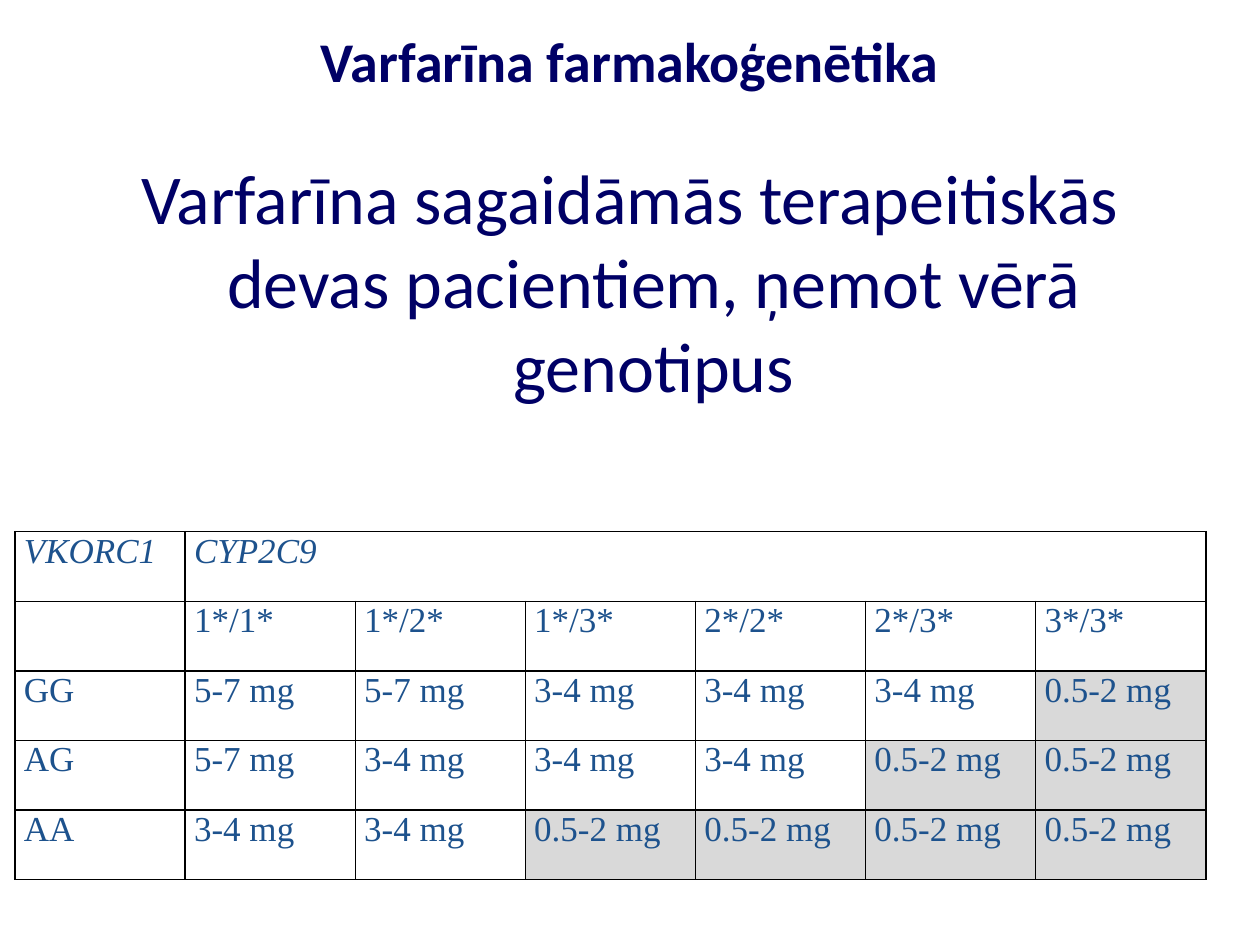
import pptx
import pptx.dml.color
import pptx.enum.text
import pptx.oxml
import pptx.oxml.ns
import pptx.util

NAVY = pptx.dml.color.RGBColor(0x00, 0x00, 0x66)
BLUE = pptx.dml.color.RGBColor(0x1D, 0x52, 0x8D)
BLACK = pptx.dml.color.RGBColor(0x00, 0x00, 0x00)
GREY = pptx.dml.color.RGBColor(0xD9, 0xD9, 0xD9)
WIDTH = pptx.util.Inches(10)
HEIGHT = pptx.util.Inches(7.5)
GRID_COLUMNS = 100
GRID_ROWS = 75
ALIGN = pptx.enum.text.PP_ALIGN

LOW_DOSE = "0.5-2 mg"
MEDIUM_DOSE = "3-4 mg"
HIGH_DOSE = "5-7 mg"
CYP2C9_GENOTYPES = ["1*/1*", "1*/2*", "1*/3*", "2*/2*", "2*/3*", "3*/3*"]
DOSES = {
    "GG": [HIGH_DOSE] * 2 + [MEDIUM_DOSE] * 3 + [LOW_DOSE],
    "AG": [HIGH_DOSE] + [MEDIUM_DOSE] * 3 + [LOW_DOSE] * 2,
    "AA": [MEDIUM_DOSE] * 2 + [LOW_DOSE] * 4,
}


class SlideBuilder:
    heading_font = "Calibri"
    table_font = "Times New Roman"

    def __init__(self, deck):
        self.slide = deck.slides.add_slide(deck.slide_layouts[5])

    def area(self, column, row, columns, rows):
        across, down = WIDTH / GRID_COLUMNS, HEIGHT / GRID_ROWS
        return (round(column * across), round(row * down),
                round(columns * across), round(rows * down))

    def style(self, para, name, size, color, align, bold=False, italic=False):
        para.alignment = align
        para.font.name = name
        para.font.size = pptx.util.Pt(size)
        para.font.color.rgb = color
        para.font.bold = bold
        para.font.italic = italic

    def title(self, text, *place):
        box = self.slide.shapes.title
        box.left, box.top, box.width, box.height = self.area(*place)
        box.text_frame.text = text
        box.text_frame.vertical_anchor = pptx.enum.text.MSO_ANCHOR.MIDDLE
        self.style(box.text_frame.paragraphs[0], self.heading_font, 32, NAVY,
                   ALIGN.CENTER, bold=True)

    def statement(self, text, hanging, *place):
        box = self.slide.shapes.add_textbox(*self.area(*place))
        box.text_frame.word_wrap = True
        box.text_frame.text = text
        para = box.text_frame.paragraphs[0]
        properties = para._p.get_or_add_pPr()
        properties.set("marL", str(pptx.util.Inches(hanging)))
        properties.set("indent", str(-pptx.util.Inches(hanging)))
        self.style(para, self.heading_font, 40, NAVY, ALIGN.CENTER)

    def border(self, cell):
        properties = cell._tc.get_or_add_tcPr()
        for position, side in enumerate(("lnL", "lnR", "lnT", "lnB")):
            properties.insert(position, pptx.oxml.parse_xml(
                f'<a:{side} {pptx.oxml.ns.nsdecls("a")} w="{pptx.util.Pt(1)}">'
                f'<a:solidFill><a:srgbClr val="{BLACK}"/></a:solidFill></a:{side}>'))

    def cell(self, cell, text, italic):
        cell.margin_left = cell.margin_right = pptx.util.Inches(0.07)
        cell.margin_top = cell.margin_bottom = 0
        if text == LOW_DOSE:
            cell.fill.solid()
            cell.fill.fore_color.rgb = GREY
        else:
            cell.fill.background()
        self.border(cell)
        cell.text = text
        self.style(cell.text_frame.paragraphs[0], self.table_font, 20, BLUE,
                   ALIGN.JUSTIFY, italic=italic)

    def table(self, rows, *place):
        columns = len(rows[0])
        table = self.slide.shapes.add_table(len(rows), columns, *self.area(*place)).table
        table.first_row = table.horz_banding = False
        for row, texts in enumerate(rows):
            for column, text in enumerate(texts):
                self.cell(table.cell(row, column), text, italic=row == 0)
        table.cell(0, 1).merge(table.cell(0, columns - 1))


def main():
    deck = pptx.Presentation()
    deck.slide_width, deck.slide_height = WIDTH, HEIGHT
    builder = SlideBuilder(deck)
    builder.statement("Varfarīna sagaidāmās terapeitiskās devas pacientiem, ņemot vērā genotipus",
                      0.38, 5, 11.8, 90, 57.4)
    builder.title("Varfarīna farmakoģenētika", 5, 1.7, 90, 6.2)
    rows = [["VKORC1", "CYP2C9"] + [""] * 5, [""] + CYP2C9_GENOTYPES]
    rows += [[genotype] + doses for genotype, doses in DOSES.items()]
    builder.table(rows, 1.2, 42.2, 94.5, 27.6)
    deck.save("out.pptx")


if __name__ == "__main__":
    main()
